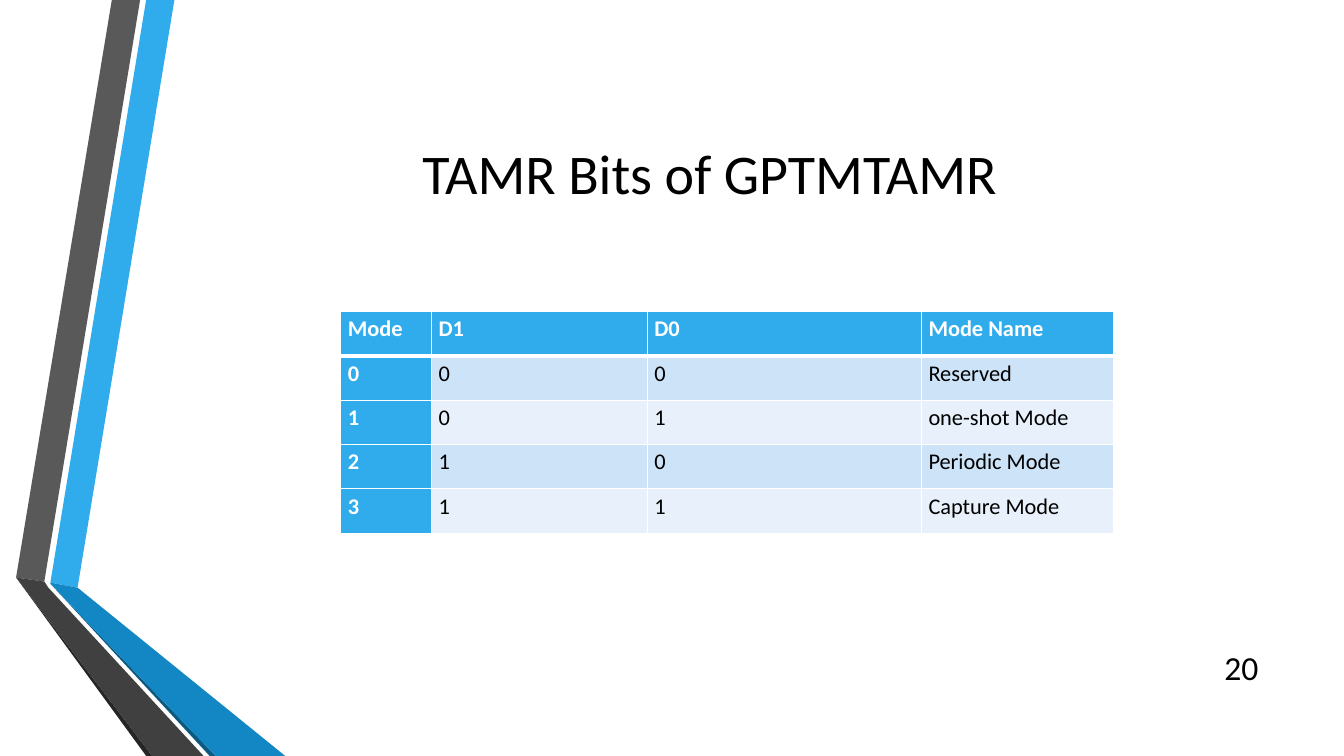
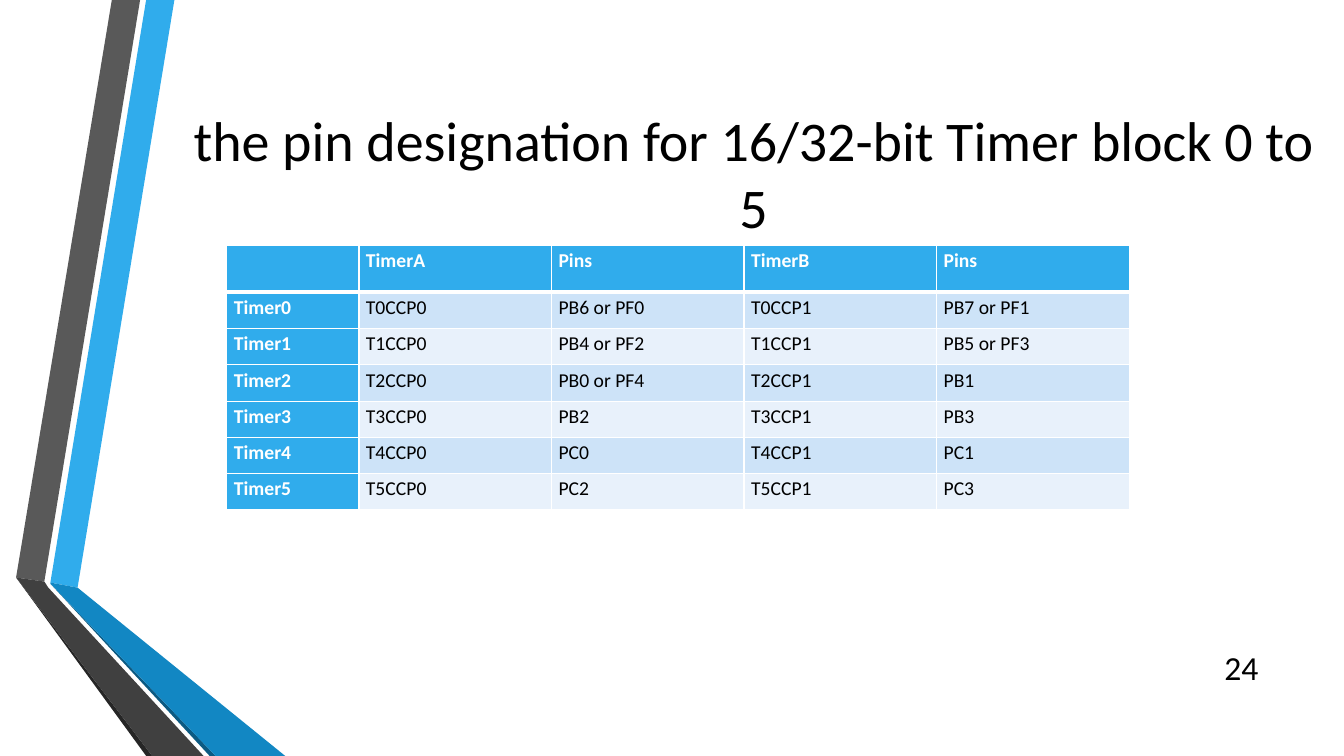
from dataclasses import dataclass

from lxml import etree
from pptx import Presentation
from pptx import util as u
from pptx.dml import color
from pptx.enum import text
from pptx.oxml import ns


@dataclass(frozen=True)
class Theme:
    """Colours, font and type sizes shared by the slides."""

    font: str = "Calibri"
    ink: str = "000000"
    white: str = "FFFFFF"
    accent: str = "30ACEC"
    accent_dark: str = "1287C3"
    accent_shadow: str = "0C5A82"
    gray: str = "595959"
    gray_dark: str = "404040"
    gray_shadow: str = "262626"
    bands: tuple = ("CDE3F8", "E8F1FB")
    title_size: int = 40
    number_size: int = 24
    border: int = 1
    header_border: int = 3


THEME = Theme()
TITLE_ONLY = 5

RIBBONS = (
    (THEME.accent, ((0.5, 5.78), (0.77, 5.83), (1.73, 0), (1.45, 0))),
    (THEME.gray, ((1.39, 0), (1.11, 0), (0.16, 5.73), (0.44, 5.77))),
    (THEME.gray_shadow, ((0.16, 5.73), (1.45, 7.5), (1.51, 7.5))),
    (THEME.accent_shadow, ((0.5, 5.79), (2.08, 7.5), (2.14, 7.5))),
    (THEME.accent_dark, ((0.5, 5.78), (0.5, 5.79), (2.14, 7.5), (2.83, 7.5), (0.77, 5.83))),
    (THEME.gray_dark, ((0.16, 5.73), (1.51, 7.5), (2.02, 7.5), (0.48, 5.83), (0.44, 5.77))),
)

MODE_ROWS = (
    ("Mode", "D1", "D0", "Mode Name"),
    ("0", "0", "0", "Reserved"),
    ("1", "0", "1", "one-shot Mode"),
    ("2", "1", "0", "Periodic Mode"),
    ("3", "1", "1", "Capture Mode"),
)

TIMER_PINS = (
    ("PB6 or PF0", "PB7 or PF1"),
    ("PB4 or PF2", "PB5 or PF3"),
    ("PB0 or PF4", "PB1"),
    ("PB2", "PB3"),
    ("PC0", "PC1"),
    ("PC2", "PC3"),
)

TIMER_ROWS = (("", "TimerA", "Pins", "TimerB", "Pins"),) + tuple(
    (f"Timer{index}", f"T{index}CCP0", pin_a, f"T{index}CCP1", pin_b)
    for index, (pin_a, pin_b) in enumerate(TIMER_PINS)
)


def rgb(value):
    """Turn a hex string into a colour."""
    return color.RGBColor.from_string(value)


def format_paragraph(paragraph, size, fill=THEME.ink, bold=False, align=None):
    """Apply the theme font to every run of a paragraph."""
    paragraph.alignment = align
    for run in paragraph.runs:
        run.font.name = THEME.font
        run.font.size = u.Pt(size)
        run.font.bold = bold
        run.font.color.rgb = rgb(fill)


def draw_ribbons(slide, left=0, top=0):
    """Draw the folded ribbons from the given corner."""
    for fill, points in RIBBONS:
        start, *rest = [(u.Inches(left + x), u.Inches(top + y)) for x, y in points]
        builder = slide.shapes.build_freeform(*start)
        builder.add_line_segments(rest)
        shape = builder.convert_to_shape()
        shape.shadow.inherit = False
        shape.fill.solid()
        shape.fill.fore_color.rgb = rgb(fill)
        shape.line.fill.background()


def place_title(slide, wording, left, top, width, height):
    """Move and format the title placeholder."""
    title = slide.shapes.title
    title.left, title.top = u.Inches(left), u.Inches(top)
    title.width, title.height = u.Inches(width), u.Inches(height)
    frame = title.text_frame
    frame.text = wording
    frame.word_wrap = True
    frame.auto_size = text.MSO_AUTO_SIZE.NONE
    frame.vertical_anchor = text.MSO_ANCHOR.MIDDLE
    format_paragraph(frame.paragraphs[0], THEME.title_size, align=text.PP_ALIGN.CENTER)


def place_number(slide, number, left, top, width, height):
    """Add the page number."""
    box = slide.shapes.add_textbox(*map(u.Inches, (left, top, width, height)))
    frame = box.text_frame
    frame.text = str(number)
    frame.word_wrap = True
    frame.vertical_anchor = text.MSO_ANCHOR.MIDDLE
    format_paragraph(frame.paragraphs[0], THEME.number_size, align=text.PP_ALIGN.RIGHT)


def set_borders(cell, top, bottom):
    """Give a cell white borders with the given top and bottom widths."""
    properties = cell._tc.get_or_add_tcPr()
    widths = {"L": THEME.border, "R": THEME.border, "T": top, "B": bottom}
    for side, width in widths.items():
        line = etree.SubElement(properties, ns.qn(f"a:ln{side}"), w=str(u.Pt(width)))
        fill = etree.SubElement(line, ns.qn("a:solidFill"))
        etree.SubElement(fill, ns.qn("a:srgbClr"), val=THEME.white)


def format_cell(cell, wording, row, column, size):
    """Fill, border and write one table cell."""
    heading = row == 0 or column == 0
    top = THEME.header_border if row == 1 else THEME.border
    bottom = THEME.header_border if row == 0 else THEME.border
    set_borders(cell, top, bottom)
    cell.fill.solid()
    cell.fill.fore_color.rgb = rgb(THEME.accent if heading else THEME.bands[(row - 1) % 2])
    cell.margin_left = cell.margin_right = u.Inches(0.07)
    cell.margin_top = cell.margin_bottom = 0
    cell.text_frame.text = wording
    paragraph = cell.text_frame.paragraphs[0]
    paragraph.line_spacing = 1.15
    format_paragraph(paragraph, size, THEME.white if heading else THEME.ink, heading)


def place_table(slide, rows, left, top, widths, heights, size):
    """Add a table with a heading row and a heading column."""
    box = map(u.Inches, (left, top, sum(widths), sum(heights)))
    table = slide.shapes.add_table(len(rows), len(widths), *box).table
    table.first_col = True
    for column, width in zip(table.columns, widths):
        column.width = u.Inches(width)
    for row, height in zip(table.rows, heights):
        row.height = u.Inches(height)
    for row_index, row in enumerate(rows):
        for column_index, wording in enumerate(row):
            cell = table.cell(row_index, column_index)
            format_cell(cell, wording, row_index, column_index, size)


def add_table_slide(presentation, title, title_width, number, **table):
    """Add a slide with ribbons, a title, a page number and a table."""
    slide = presentation.slides.add_slide(presentation.slide_layouts[TITLE_ONLY])
    draw_ribbons(slide)
    place_title(slide, title, 1.62, 0.75, title_width, 1.92)
    place_number(slide, number, 11.98, 6.42, 0.6, 0.4)
    place_table(slide, **table)


def main():
    """Build and save the presentation."""
    presentation = Presentation()
    presentation.slide_width = u.Inches(13.33)
    presentation.slide_height = u.Inches(7.5)
    add_table_slide(
        presentation, "TAMR Bits of GPTMTAMR ", 10.96, 20,
        rows=MODE_ROWS, left=3.38, top=3.09,
        widths=(0.9, 2.14, 2.72, 1.91), heights=(0.44,) * 5, size=16,
    )
    add_table_slide(
        presentation, "the pin designation for 16/32-bit Timer block 0 to 5", 11.71, 24,
        rows=TIMER_ROWS, left=2.25, top=2.43,
        widths=(1.31,) + (1.91,) * 4, heights=(0.47,) + (0.36,) * 6, size=14,
    )
    presentation.save("out.pptx")


if __name__ == "__main__":
    main()
